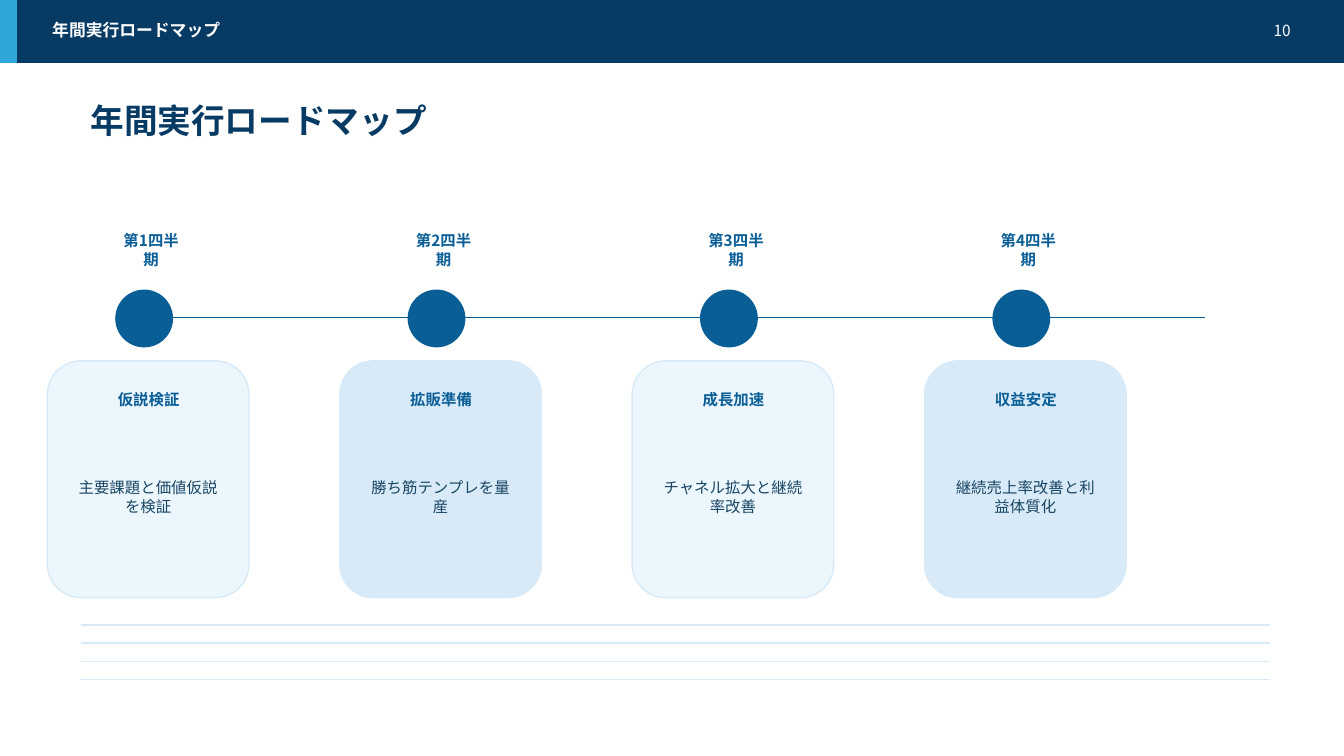
from dataclasses import dataclass
from typing import NamedTuple

from lxml import etree
from pptx import Presentation
from pptx.dml.color import RGBColor
from pptx.enum.shapes import MSO_CONNECTOR, MSO_SHAPE
from pptx.enum.text import MSO_ANCHOR, PP_ALIGN
from pptx.oxml.ns import qn
from pptx.slide import Slide
from pptx.util import Inches, Length, Pt

RECTANGLE = MSO_SHAPE.RECTANGLE
ROUNDED = MSO_SHAPE.ROUNDED_RECTANGLE
OVAL = MSO_SHAPE.OVAL
STRAIGHT = MSO_CONNECTOR.STRAIGHT
MIDDLE = MSO_ANCHOR.MIDDLE
LEFT, CENTER, RIGHT = PP_ALIGN.LEFT, PP_ALIGN.CENTER, PP_ALIGN.RIGHT

COLUMNS, ROWS = 133.3, 75
UNIT = 0.1
QUARTER_STEP = 29
RULE_STEP = 1.8


@dataclass(frozen=True)
class Theme:
    navy: str = "083B64"
    blue: str = "0A5E96"
    sky: str = "2EA7D8"
    pale: str = "ECF6FD"
    mist: str = "D8EAF8"
    ink: str = "184562"
    white: str = "FFFFFF"
    body_font: str = "Noto Sans CJK JP"
    title_font: str = "Lato"
    title_size: int = 24
    header_size: int = 12
    body_size: int = 11
    line_width: int = 1


THEME = Theme()


class Box(NamedTuple):
    column: float
    row: float
    columns: float
    rows: float

    def shifted(self, columns: float) -> "Box":
        return self._replace(column=self.column + columns)

    def lengths(self) -> list[Length]:
        return [grid(value) for value in self]


@dataclass(frozen=True)
class Style:
    color: str
    size: int = THEME.body_size
    bold: bool = False
    align: PP_ALIGN = CENTER
    font: str = THEME.body_font


@dataclass(frozen=True)
class Quarter:
    label: str
    theme: str
    goal: str
    fill: str


HEADER = Style(THEME.white, THEME.header_size, True, LEFT)
PAGE = Style(THEME.white, align=RIGHT)
TITLE = Style(THEME.navy, THEME.title_size, True, LEFT, THEME.title_font)
STRONG = Style(THEME.blue, bold=True)
GOAL = Style(THEME.ink)

ROADMAP = "年間実行ロードマップ"
QUARTERS = [
    Quarter("第1四半期", "仮説検証", "主要課題と価値仮説を検証", THEME.pale),
    Quarter("第2四半期", "拡販準備", "勝ち筋テンプレを量産", THEME.mist),
    Quarter("第3四半期", "成長加速", "チャネル拡大と継続率改善", THEME.pale),
    Quarter("第4四半期", "収益安定", "継続売上率改善と利益体質化", THEME.mist),
]


def grid(units: float) -> Length:
    return Inches(round(units * UNIT, 2))


def add_rule(slide: Slide, start: float, end: float, row: float, color: str) -> None:
    rule = slide.shapes.add_connector(STRAIGHT, grid(start), grid(row), grid(end), grid(row))
    rule.line.color.rgb = RGBColor.from_string(color)
    rule.line.width = Pt(THEME.line_width)
    etree.SubElement(rule._element.spPr, qn("a:effectLst"))


def add_block(slide: Slide, kind: MSO_SHAPE, box: Box, fill: str, outline: str) -> None:
    block = slide.shapes.add_shape(kind, *box.lengths())
    block.shadow.inherit = False
    block.fill.solid()
    block.fill.fore_color.rgb = RGBColor.from_string(fill)
    block.line.color.rgb = RGBColor.from_string(outline)
    block.line.width = Pt(THEME.line_width)


def add_text(slide: Slide, box: Box, text: str, style: Style) -> None:
    frame = slide.shapes.add_textbox(*box.lengths()).text_frame
    frame.word_wrap = True
    frame.vertical_anchor = MIDDLE
    paragraph = frame.paragraphs[0]
    paragraph.alignment = style.align
    run = paragraph.add_run()
    run.text = text
    run.font.size = Pt(style.size)
    run.font.bold = style.bold
    run.font.color.rgb = RGBColor.from_string(style.color)
    run.font.name = style.font
    east_asian = etree.SubElement(run._r.get_or_add_rPr(), qn("a:ea"))
    east_asian.set("typeface", style.font)


def add_header(slide: Slide) -> None:
    add_block(slide, RECTANGLE, Box(0, 0, COLUMNS, 6.2), THEME.navy, THEME.navy)
    add_block(slide, RECTANGLE, Box(0, 0, 1.6, 6.2), THEME.sky, THEME.sky)
    add_text(slide, Box(4.2, 1.7, 88, 2.6), ROADMAP, HEADER)
    add_text(slide, Box(121.5, 1.7, 7.5, 2.6), "10", PAGE)
    add_text(slide, Box(8, 9.5, 114, 4.8), ROADMAP, TITLE)


def add_quarter(slide: Slide, quarter: Quarter, shift: float) -> None:
    add_block(slide, OVAL, Box(11.5, 28.8, 5.6, 5.6).shifted(shift), THEME.blue, THEME.blue)
    add_text(slide, Box(10.5, 23.6, 9, 2.4).shifted(shift), quarter.label, STRONG)
    add_block(slide, ROUNDED, Box(4.7, 35.8, 20, 23.5).shifted(shift), quarter.fill, THEME.mist)
    add_text(slide, Box(7, 38.5, 15.5, 2.2).shifted(shift), quarter.theme, STRONG)
    add_text(slide, Box(6.1, 41.8, 17.2, 15).shifted(shift), quarter.goal, GOAL)


def main() -> None:
    deck = Presentation()
    deck.slide_width, deck.slide_height = grid(COLUMNS), grid(ROWS)
    slide = deck.slides.add_slide(deck.slide_layouts[6])
    for index in range(4):
        add_rule(slide, 8, 126, 62 + index * RULE_STEP, THEME.mist)
    add_header(slide)
    add_rule(slide, 13.5, 119.5, 31.5, THEME.blue)
    for index, quarter in enumerate(QUARTERS):
        add_quarter(slide, quarter, index * QUARTER_STEP)
    deck.save("out.pptx")


if __name__ == "__main__":
    main()
